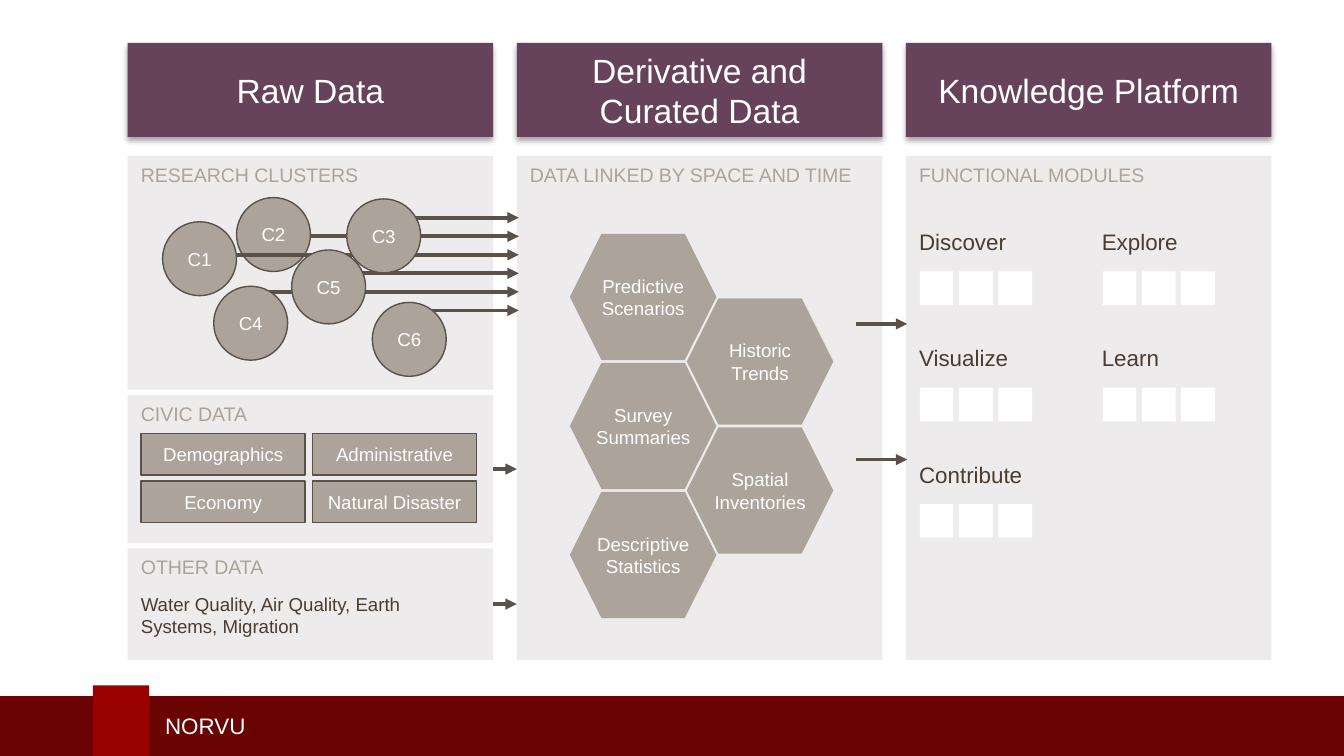
from dataclasses import dataclass

from lxml import etree
from pptx import Presentation
from pptx.dml.color import RGBColor
from pptx.enum.shapes import MSO_CONNECTOR, MSO_SHAPE
from pptx.enum.text import MSO_ANCHOR, MSO_AUTO_SIZE, PP_ALIGN
from pptx.oxml import parse_xml
from pptx.oxml.ns import nsdecls, qn
from pptx.util import Emu, Inches, Pt

RECTANGLE, OVAL, HEXAGON = MSO_SHAPE.RECTANGLE, MSO_SHAPE.OVAL, MSO_SHAPE.HEXAGON
STRAIGHT = MSO_CONNECTOR.STRAIGHT
TOP, MIDDLE = MSO_ANCHOR.TOP, MSO_ANCHOR.MIDDLE
LEFT, CENTER = PP_ALIGN.LEFT, PP_ALIGN.CENTER
RIGHT_SIDE = 3

WHITE = RGBColor(0xFF, 0xFF, 0xFF)
PLUM = RGBColor(0x66, 0x43, 0x5A)
PANEL_GRAY = RGBColor(0xED, 0xEB, 0xEB)
TAUPE = RGBColor(0xAC, 0xA3, 0x9A)
DARK_TAUPE = RGBColor(0x59, 0x51, 0x4A)
BROWN = RGBColor(0x4A, 0x3C, 0x31)
DARK_RED = RGBColor(0x69, 0x03, 0x04)
CRIMSON = RGBColor(0x99, 0x00, 0x00)

FONT = "Arial"
SLIDE_WIDTH = Inches(10)
SLIDE_HEIGHT = Emu(SLIDE_WIDTH * 9 // 16)

# All lengths below are hundredths of the slide width.
FULL_WIDTH, FULL_HEIGHT = 100, 56.25
COLUMN_WIDTH = 27.2
FIRST_COLUMN, LAST_COLUMN = 9.5, 67.4
COLUMNS = [FIRST_COLUMN, (FIRST_COLUMN + LAST_COLUMN) / 2, LAST_COLUMN]
PANEL_TOP, PANEL_HEIGHT = 11.6, 37.5
CIRCLE_SIZE = 5.5


@dataclass(frozen=True)
class Box:
    left: float
    top: float
    width: float
    height: float

    def lengths(self) -> tuple:
        return tuple(map(share, (self.left, self.top, self.width, self.height)))


@dataclass(frozen=True)
class TextStyle:
    size: float
    color: RGBColor = WHITE
    align: PP_ALIGN = CENTER
    anchor: MSO_ANCHOR = MIDDLE


@dataclass(frozen=True)
class Circle:
    label: str
    left: float
    top: float


HEADER_STYLE = TextStyle(18)
LABEL_STYLE = TextStyle(10)
PANEL_STYLE = TextStyle(10.5, TAUPE, LEFT, TOP)
BODY_STYLE = TextStyle(10, BROWN, LEFT, TOP)
MODULE_STYLE = TextStyle(12, BROWN, LEFT, TOP)
FOOTER_STYLE = TextStyle(12, WHITE, LEFT)

HEADERS = ["Raw Data", "Derivative and Curated Data", "Knowledge Platform"]
BACK_CIRCLES = [Circle("C1", 12.1, 16.5), Circle("C2", 17.6, 14.7)]
FRONT_CIRCLES = [Circle("C3", 25.8, 14.8), Circle("C6", 27.7, 22.5),
                 Circle("C5", 21.7, 18.6), Circle("C4", 15.9, 21.3)]
CLUSTER_ARROW_STARTS = [29.4, 23.1, 17.6, 23.6, 17.6, 31.8]
TILES = [["Demographics", "Administrative"], ["Economy", "Natural Disaster"]]
HEXAGONS = ["Predictive Scenarios", "Historic Trends", "Survey Summaries",
            "Spatial Inventories", "Descriptive Statistics"]
MODULES = [["Discover", "Explore"], ["Visualize", "Learn"], ["Contribute"]]


def share(value: float) -> Emu:
    return Emu(round(SLIDE_WIDTH * value / 100))


def write_text(shape, text: str, style: TextStyle) -> None:
    frame = shape.text_frame
    frame.word_wrap = True
    frame.vertical_anchor = style.anchor
    paragraph = frame.paragraphs[0]
    paragraph.alignment = style.align
    run = paragraph.add_run()
    run.text = text
    run.font.name = FONT
    run.font.size = Pt(style.size)
    run.font.color.rgb = style.color


def add_block(slide, box: Box, fill: RGBColor, text: str = "",
              style: TextStyle = LABEL_STYLE, kind=RECTANGLE, outlined: bool = False):
    shape = slide.shapes.add_shape(kind, *box.lengths())
    shape.shadow.inherit = False
    shape.fill.solid()
    shape.fill.fore_color.rgb = fill
    if outlined:
        shape.line.color.rgb = DARK_TAUPE
        shape.line.width = Pt(0.75)
    else:
        shape.line.fill.background()
    if text:
        write_text(shape, text, style)
    return shape


def add_label(slide, box: Box, text: str, style: TextStyle) -> None:
    label = slide.shapes.add_textbox(*box.lengths())
    write_text(label, text, style)
    label.text_frame.auto_size = MSO_AUTO_SIZE.SHAPE_TO_FIT_TEXT


def add_arrow(slide, start: float, end: float, height: float, source=None) -> None:
    """Draw a horizontal arrow, joined to the right side of source if given."""
    y = share(height)
    arrow = slide.shapes.add_connector(STRAIGHT, share(start), y, share(end), y)
    if source is not None:
        arrow.begin_connect(source, RIGHT_SIDE)
        arrow.end_y = arrow.begin_y
    arrow.line.color.rgb = DARK_TAUPE
    arrow.line.width = Pt(2)
    etree.SubElement(arrow.line._get_or_add_ln(), qn("a:tailEnd"), type="triangle")
    etree.SubElement(arrow._element.spPr, qn("a:effectLst"))


def add_header(slide, left: float, text: str) -> None:
    header = add_block(slide, Box(left, 3.2, COLUMN_WIDTH, 7), PLUM, text, HEADER_STYLE)
    effects = header._element.spPr.find(qn("a:effectLst"))
    effects.append(parse_xml(
        f'<a:outerShdw {nsdecls("a")} blurRad="{Pt(3.1)}" dist="{Pt(1.8)}" dir="5400000" '
        'rotWithShape="0"><a:srgbClr val="000000"><a:alpha val="35000"/></a:srgbClr>'
        '</a:outerShdw>'))


def add_panel(slide, column: int, top: float, height: float, title: str):
    box = Box(COLUMNS[column], top, COLUMN_WIDTH, height)
    return add_block(slide, box, PANEL_GRAY, title, PANEL_STYLE)


def add_circles(slide, circles: list[Circle]) -> None:
    for circle in circles:
        box = Box(circle.left, circle.top, CIRCLE_SIZE, CIRCLE_SIZE)
        add_block(slide, box, TAUPE, circle.label, kind=OVAL, outlined=True)


def add_footer(slide) -> None:
    add_block(slide, Box(0, 51.8, FULL_WIDTH, FULL_HEIGHT - 51.8), DARK_RED)
    add_block(slide, Box(6.9, 51, 4.2, FULL_HEIGHT - 51), CRIMSON)
    add_label(slide, Box(11.3, 52.5, 39.5, 3), "NORVU", FOOTER_STYLE)


def add_raw_data(slide) -> None:
    add_panel(slide, 0, PANEL_TOP, 17.4, "RESEARCH CLUSTERS")
    civic = add_panel(slide, 0, 29.4, 11, "CIVIC DATA")
    other = add_panel(slide, 0, 40.8, 8.3, "OTHER DATA")
    add_circles(slide, BACK_CIRCLES)
    for row, start in enumerate(CLUSTER_ARROW_STARTS):
        add_arrow(slide, start, 38.6, 16.2 + 1.38 * row)
    add_circles(slide, FRONT_CIRCLES)
    for row, names in enumerate(TILES):
        for column, name in enumerate(names):
            box = Box(10.5 + 12.75 * column, 32.25 + 3.55 * row, 12.2, 3.1)
            add_block(slide, box, TAUPE, name, outlined=True)
    add_label(slide, Box(COLUMNS[0], 43.6, 24.9, 4.4),
              "Water Quality, Air Quality, Earth Systems, Migration", BODY_STYLE)
    for panel, middle in ((civic, 34.9), (other, 44.95)):
        add_arrow(slide, COLUMNS[0] + COLUMN_WIDTH, COLUMNS[1], middle, panel)


def add_linked_data(slide) -> None:
    for index, name in enumerate(HEXAGONS):
        box = Box(42.4 + 8.7 * (index % 2), 17.4 + 4.8 * index, 10.9, 9.4)
        hexagon = add_block(slide, box, TAUPE, name, kind=HEXAGON)
        hexagon.text_frame.margin_left = hexagon.text_frame.margin_right = 0


def add_modules(slide) -> None:
    add_panel(slide, 2, PANEL_TOP, PANEL_HEIGHT, "FUNCTIONAL MODULES")
    for row, names in enumerate(MODULES):
        for column, name in enumerate(names):
            left = COLUMNS[2] + COLUMN_WIDTH / 2 * column
            top = 16.5 + 8.65 * row
            add_label(slide, Box(left, top, 11.3, 3), name, MODULE_STYLE)
            for square in range(3):
                box = Box(left + 1.05 + 2.92 * square, top + 3.7, 2.5, 2.5)
                add_block(slide, box, WHITE)
    for height in (24.1, 34.2):
        add_arrow(slide, 63.7, 67.5, height)


def main() -> None:
    presentation = Presentation()
    presentation.slide_width, presentation.slide_height = SLIDE_WIDTH, SLIDE_HEIGHT
    slide = presentation.slides.add_slide(presentation.slide_layouts[6])
    add_footer(slide)
    for left, text in zip(COLUMNS, HEADERS):
        add_header(slide, left, text)
    add_panel(slide, 1, PANEL_TOP, PANEL_HEIGHT, "DATA LINKED BY SPACE AND TIME")
    add_raw_data(slide)
    add_linked_data(slide)
    add_modules(slide)
    presentation.save("out.pptx")


if __name__ == "__main__":
    main()
